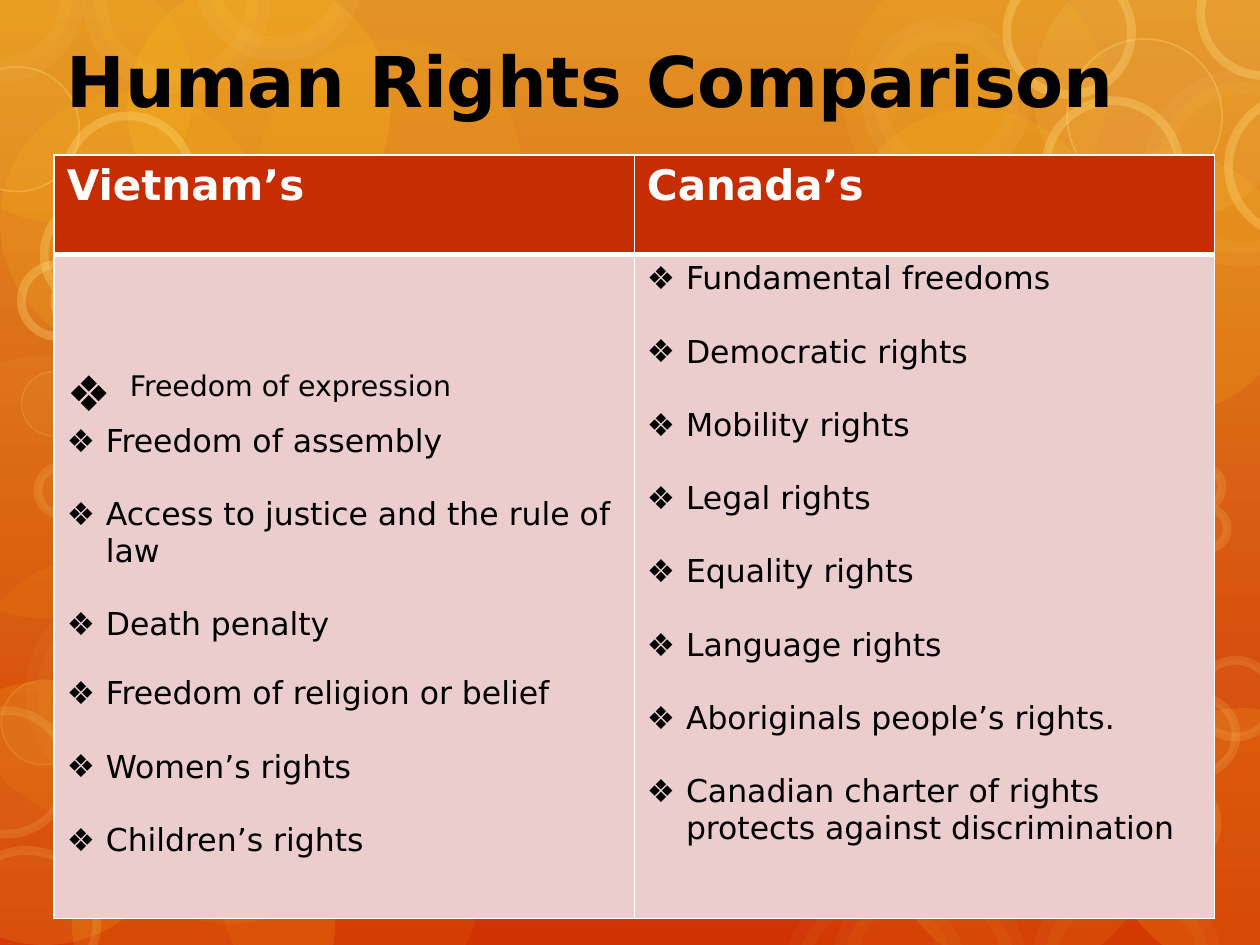
from lxml.etree import SubElement as Sub
from pptx import Presentation
from pptx.dml.color import RGBColor as Rgb
from pptx.enum.shapes import MSO_SHAPE as Kind
from pptx.enum.text import MSO_ANCHOR as Anchor, PP_ALIGN as Align
from pptx.oxml.ns import qn
from pptx.util import Inches as In, Pt

WIDE, HIGH = 10, 7.5
FONT = "DejaVu Sans"
HUES = {
    "sky": "E39325", "ember": "D13202", "gold": "FDC61B", "lemon": "FFE281",
    "cream": "FEEBAE", "head": "C62D03", "body": "EACDCC",
    "ink": "000000", "white": "FFFFFF",
}

# Soft discs without outline: left, top, fill opacity
GLOW_SIZE = 2.09
GLOWS = [
    (-0.26, 4.42, 8), (0.57, 1.2, 10), (2.05, 0.31, 10), (0.57, 6.27, 16),
    (-0.56, -0.32, 14), (1.01, -0.18, 20), (0, 0.72, 15), (8.2, -0.32, 10),
    (6.69, -0.29, 10), (8.2, 1.2, 15), (8.81, 5.62, 16), (7.29, 4.77, 5),
    (-0.69, 5.41, 16), (0.77, 5.24, 8), (6.69, 0.86, 15), (7.06, 5.62, 10),
    (1.73, 5.96, 8), (-0.7, 2.82, 8),
]
# Discs with a wide pale rim, by fill and rim opacity: left, top, size
HALOS = {
    (10, 6): [
        (9.18, 0.65, 1.37), (6.94, 0.23, 1.14), (7.52, 1.59, 1.33),
        (7.89, 2.24, 1.14), (8.47, 2.91, 0.79), (0.75, -0.65, 1.3),
        (1.64, -0.75, 1.14), (-0.57, -0.58, 1.14),
    ],
    (6, 4): [
        (0.3, 4.73, 1.53), (6.32, 7.1, 1.25), (6.69, 7.01, 1.37),
        (8.28, 7.01, 1.33),
    ],
}
# Outlined discs, by rim width and opacity: left, top, size
RINGS = {
    (1, 15): [
        (0.01, 5.4, 0.67), (8.34, 6.14, 0.81), (8.2, 5.39, 0.81),
        (0.17, 2.95, 0.51), (0.52, 3.46, 0.5),
    ],
    (5, 15): [
        (-0.35, 6.75, 1.12), (-0.44, 5.64, 0.98), (7.63, 5.73, 0.81),
        (9, 6.2, 0.66), (8.83, 4.48, 0.61), (9.2, 5.53, 0.61),
        (9.5, 5.24, 0.61), (9.37, 3.7, 0.33), (9.18, 3.87, 0.33),
        (9.41, 4.03, 0.33), (0.3, 3.7, 0.39),
    ],
    (1, 30): [
        (-0.36, 0.53, 0.99), (0.41, 2.06, 0.67), (8.47, 0.31, 1.23),
        (8.17, 1.45, 0.67),
    ],
    (5, 30): [
        (0.52, 0.92, 1), (0.35, 1.59, 0.85), (0.17, 2.1, 0.57),
        (7.99, -0.24, 0.99), (9.53, -0.4, 1), (9.75, 0.76, 1.12),
        (8.3, 0.8, 1.06),
    ],
}

# Each right: text and the gap above it in points
GAP = 21
VIETNAM = [
    ("Freedom of assembly", 0),
    ("Access to justice and the rule of law", GAP),
    ("Death penalty", GAP),
    ("Freedom of religion or belief", 18.6),
    ("Women’s rights", GAP),
    ("Children’s rights", GAP),
]
CANADA = [(text, GAP if i else 0) for i, text in enumerate([
    "Fundamental freedoms", "Democratic rights", "Mobility rights",
    "Legal rights", "Equality rights", "Language rights",
    "Aboriginals people’s rights.",
    "Canadian charter of rights protects against discrimination",
])]


def hue(name):
    return Rgb.from_string(HUES[name])


def paint(fill, name, share=100):
    """Solid fill; share is the opacity in percent."""
    fill.solid()
    fill.fore_color.rgb = hue(name)
    if share < 100:
        for node in fill._xPr.iter(qn("a:srgbClr")):
            Sub(node, qn("a:alpha"), val=str(share * 1000))


def bubble(slide, box, tint, share, rim=None):
    left, top, size = map(In, box)
    shape = slide.shapes.add_shape(Kind.OVAL, left, top, size, size)
    shape.shadow.inherit = False
    paint(shape.fill, tint, share)
    if rim is None:
        shape.line.fill.background()
    else:
        name, width, clear = rim
        paint(shape.line.fill, name, clear)
        shape.line.width = Pt(width)
    return shape


def backdrop(slide):
    """Gradient and bubbles; the bubbles end up on the slide's layout."""
    fill = slide.background.fill
    fill.gradient()
    fill.gradient_angle = 270
    for stop, name, spot in zip(fill.gradient_stops, ("sky", "ember"), (0, 1)):
        stop.color.rgb, stop.position = hue(name), spot
    discs = []
    for left, top, share in GLOWS:
        tint = "lemon" if (left, top) == (8.2, -0.32) else "gold"
        discs.append(bubble(slide, (left, top, GLOW_SIZE), tint, share))
    for (share, clear), boxes in HALOS.items():
        rim = ("cream", 14, clear)
        discs += [bubble(slide, box, "gold", share, rim) for box in boxes]
    for (width, clear), boxes in RINGS.items():
        rim = ("lemon", width, clear)
        discs += [bubble(slide, box, "lemon", 5, rim) for box in boxes]
    tree = slide.slide_layout.shapes._spTree
    for num, shape in enumerate(discs, 100):
        shape._element.nvSpPr.cNvPr.set("id", str(num))
        tree.append(shape._element)


def write(para, text, size, name, bold=False):
    run = para.add_run()
    run.text = text
    font = run.font
    font.name, font.size, font.bold = FONT, Pt(size), bold
    font.color.rgb = hue(name)
    return run


def heading(slide, left, top, width, height):
    title = slide.shapes.title
    title.left, title.top, title.width, title.height = map(
        In, (left, top, width, height))
    title.text_frame.vertical_anchor = Anchor.MIDDLE
    para = title.text_frame.paragraphs[0]
    para.alignment = Align.LEFT
    write(para, "Human Rights Comparison", 40, "ink", True)


def bullet(para, indent):
    props = para._p.get_or_add_pPr()
    props.set("marL", str(In(indent)))
    props.set("indent", str(-In(indent)))
    Sub(props, qn("a:buFont"), typeface=FONT)
    Sub(props, qn("a:buChar"), char="❖")


def style(cell, name, above, below):
    props = cell._tc.get_or_add_tcPr()
    for side, width in zip("LRTB", (1, 1, above, below)):
        line = Sub(props, qn("a:ln" + side), w=str(Pt(width)))
        Sub(Sub(line, qn("a:solidFill")), qn("a:srgbClr"), val=HUES["white"])
    paint(cell.fill, name)


def rights(frame, items, fresh):
    """List the items; fresh means the first paragraph is still unused."""
    for i, (text, gap) in enumerate(items):
        para = frame.paragraphs[0] if fresh and i == 0 else frame.add_paragraph()
        para.space_before = Pt(gap)
        bullet(para, 0.31)
        write(para, text, 18, "ink")


def compare(slide, left, top, width, height):
    table = slide.shapes.add_table(
        2, 2, In(left), In(top), In(width), In(height)).table
    head = 0.13 * height
    table.rows[0].height, table.rows[1].height = In(head), In(height - head)
    for col, name in enumerate(("Vietnam’s", "Canada’s")):
        top_cell, low_cell = table.cell(0, col), table.cell(1, col)
        style(top_cell, "head", 1, 3)
        style(low_cell, "body", 3, 1)
        write(top_cell.text_frame.paragraphs[0], name, 24, "white", True)

    viet, canada = table.cell(1, 0), table.cell(1, 1)
    viet.margin_top = In(0.89)
    first = viet.text_frame.paragraphs[0]
    bullet(first, 0.5)
    run = write(first, "Freedom of expression", 28, "ink")
    run.font._element.set("baseline", "30000")
    rights(viet.text_frame, VIETNAM, False)
    rights(canada.text_frame, CANADA, True)


def main():
    deck = Presentation()
    deck.slide_width, deck.slide_height = In(WIDE), In(HIGH)
    slide = deck.slides.add_slide(deck.slide_layouts[5])
    backdrop(slide)
    heading(slide, 0.43, 0, 8.98, 1.26)
    compare(slide, 0.43, 1.23, 9.21, 6.06)
    deck.save("out.pptx")


if __name__ == "__main__":
    main()
